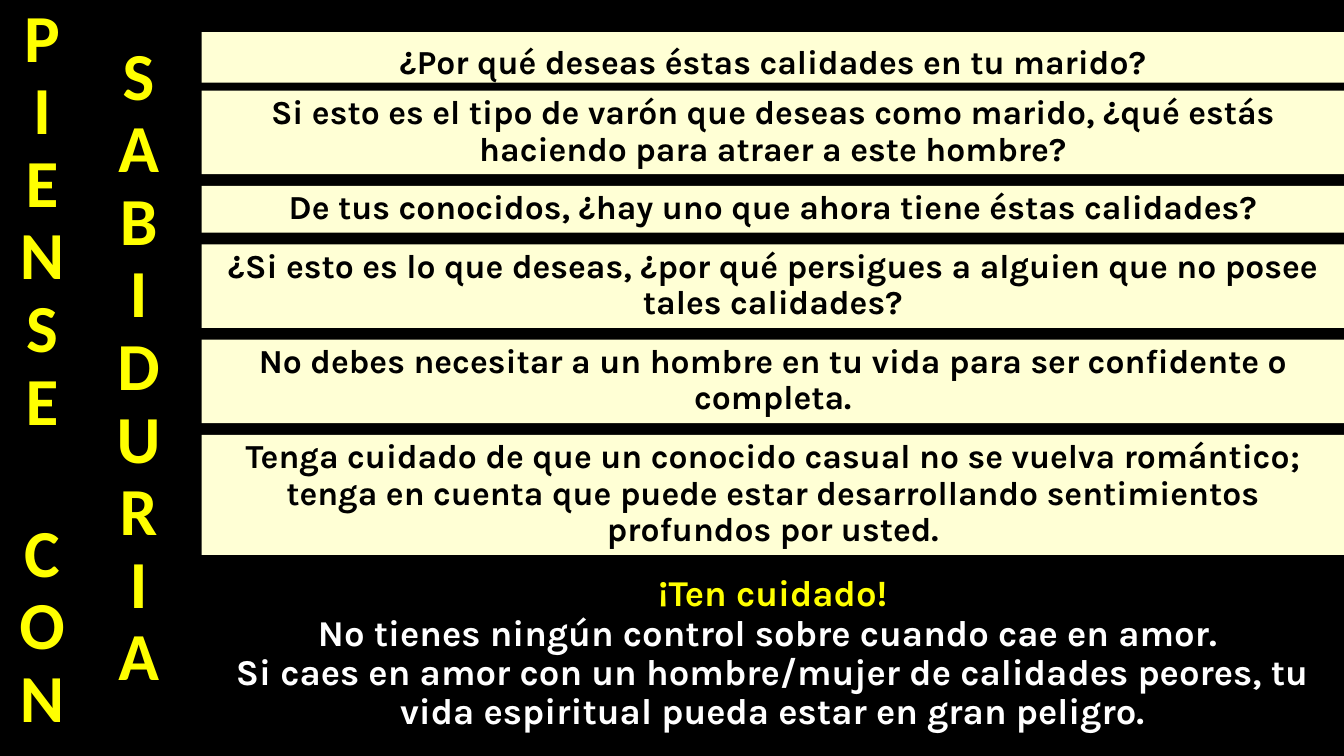
from dataclasses import dataclass

from lxml.etree import SubElement
from pptx import Presentation
from pptx.dml.color import RGBColor
from pptx.enum.shapes import MSO_SHAPE
from pptx.enum.text import MSO_ANCHOR, MSO_AUTO_SIZE, PP_ALIGN
from pptx.oxml.ns import qn
from pptx.util import Pt


@dataclass(frozen=True)
class Theme:
    background: str = "000000"
    band: str = "FFFFD5"
    dark: str = "000000"
    light: str = "FFFFFF"
    accent: str = "FFFF00"
    text_font: str = "Karla"
    letter_font: str = "Calibri"
    question_size: int = 24
    warning_size: int = 26
    letter_size: int = 48


def write(shape, paragraphs, *, font, size, colors, spacing=0.9):
    """Fill a shape with bold centred paragraphs; the last colour carries on."""
    frame = shape.text_frame
    frame.word_wrap = True
    frame.auto_size = MSO_AUTO_SIZE.SHAPE_TO_FIT_TEXT
    frame.vertical_anchor = MSO_ANCHOR.TOP
    for index, text in enumerate(paragraphs):
        paragraph = frame.paragraphs[0] if index == 0 else frame.add_paragraph()
        paragraph.alignment = PP_ALIGN.CENTER
        paragraph.line_spacing = spacing
        paragraph.space_before = paragraph.space_after = Pt(0)
        run = paragraph.add_run()
        run.text = text
        run.font.name = font
        run.font.size = Pt(size)
        run.font.bold = True
        run.font.color.rgb = RGBColor.from_string(colors[min(index, len(colors) - 1)])


class SlideBuilder:
    def __init__(self, slide, theme):
        self.slide = slide
        self.theme = theme
        fill = slide.background.fill
        fill.solid()
        fill.fore_color.rgb = RGBColor.from_string(theme.background)

    def place(self, holder, left, top, width, height):
        holder.left, holder.top = Pt(left), Pt(top)
        holder.width, holder.height = Pt(width), Pt(height)

    def band(self, question, left, top, width, height, spacing=0.9):
        band = self.slide.shapes.add_shape(
            MSO_SHAPE.RECTANGLE, Pt(left), Pt(top), Pt(width), Pt(height))
        band.shadow.inherit = False
        band.fill.solid()
        band.fill.fore_color.rgb = RGBColor.from_string(self.theme.band)
        band.line.fill.background()
        write(band, [question], font=self.theme.text_font,
              size=self.theme.question_size, colors=[self.theme.dark], spacing=spacing)

    def warning(self, sentences, *box):
        body = self.slide.placeholders[1]
        self.place(body, *box)
        write(body, sentences, font=self.theme.text_font, size=self.theme.warning_size,
              colors=[self.theme.accent, self.theme.light])
        for paragraph in body.text_frame.paragraphs:
            properties = paragraph._p.get_or_add_pPr()
            properties.set("marL", "0")
            properties.set("indent", "0")
            SubElement(properties, qn("a:buNone"))

    def vertical_word(self, word, *box, holder=None):
        """Stack the letters of a word, one to a paragraph."""
        if holder is None:
            holder = self.slide.shapes.add_textbox(0, 0, 0, 0)
        self.place(holder, *box)
        write(holder, word, font=self.theme.letter_font,
              size=self.theme.letter_size, colors=[self.theme.accent])


LEFT, WIDTH = 144, 816
LINE_HEIGHT, BAND_PADDING, BAND_GAP = 26.2, 7.2, 8.4
OPENING = "¿Por qué deseas éstas calidades en tu marido?"
QUESTIONS = [  # text, number of lines
    ("Si esto es el tipo de varón que deseas como marido, ¿qué estás "
     "haciendo para atraer a este hombre?", 2),
    ("De tus conocidos, ¿hay uno que ahora tiene éstas calidades?", 1),
    ("¿Si esto es lo que deseas, ¿por qué persigues a alguien que no posee "
     "tales calidades?", 2),
    ("No debes necesitar a un hombre en tu vida para ser confidente o completa.", 2),
    ("Tenga cuidado de que un conocido casual no se vuelva romántico; tenga en "
     "cuenta que puede estar desarrollando sentimientos profundos por usted.", 3),
]
WARNING = [
    "¡Ten cuidado!",
    "No tienes ningún control sobre cuando cae en amor. ",
    "Si caes en amor con un hombre/mujer de calidades peores, tu vida "
    "espiritual pueda estar en gran peligro.",
]


def main():
    presentation = Presentation()
    presentation.slide_width, presentation.slide_height = Pt(960), Pt(540)
    slide = presentation.slides.add_slide(presentation.slide_layouts[1])
    builder = SlideBuilder(slide, Theme())

    builder.band(OPENING, LEFT, 23, WIDTH, 36, spacing=1.1)
    top = 64.8
    for question, lines in QUESTIONS:
        height = BAND_PADDING + lines * LINE_HEIGHT
        builder.band(question, LEFT, top, WIDTH, height)
        top += height + BAND_GAP

    builder.warning(WARNING, LEFT, 407.5, WIDTH, 121)
    builder.vertical_word("PIENSE", 0, -0.7, 60, 322.5, holder=slide.shapes.title)
    builder.vertical_word("SABIDURIA", 72, 26.6, 54, 479.5)
    builder.vertical_word("CON", 0, 367.2, 60, 165.6)
    presentation.save("out.pptx")


if __name__ == "__main__":
    main()
